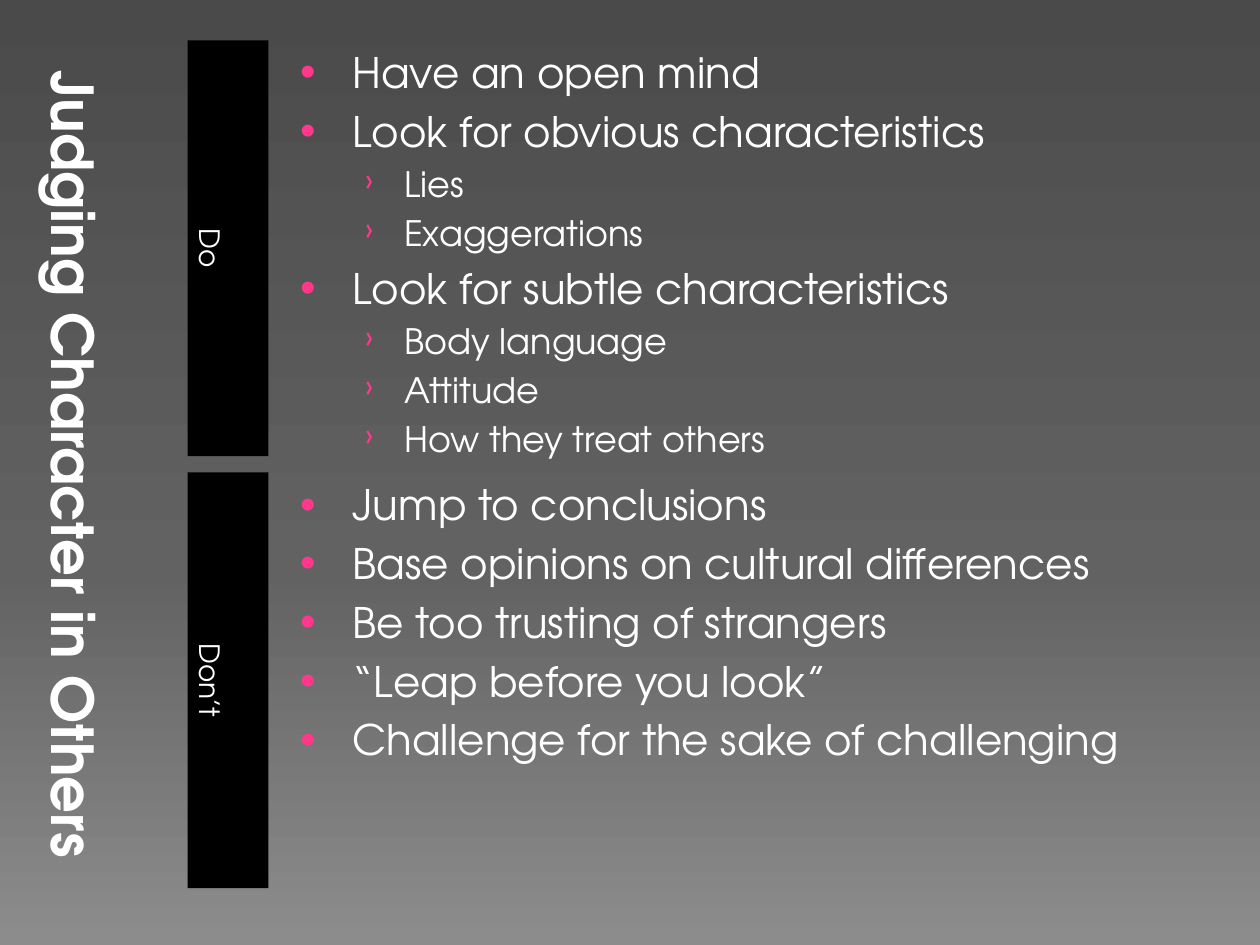
from copy import deepcopy
from dataclasses import dataclass

from lxml import etree
from pptx import Presentation
from pptx.dml.color import RGBColor
from pptx.enum.shapes import MSO_SHAPE
from pptx.enum.text import MSO_ANCHOR, PP_ALIGN
from pptx.oxml.ns import qn
from pptx.util import Inches, Pt

RECT = MSO_SHAPE.RECTANGLE
BOTTOM, TOP = MSO_ANCHOR.BOTTOM, MSO_ANCHOR.TOP
CENTER, LEFT = PP_ALIGN.CENTER, PP_ALIGN.LEFT

FONT = "TeX Gyre Adventor"
WHITE = RGBColor(0xFF, 0xFF, 0xFF)
BLACK = RGBColor(0x00, 0x00, 0x00)
PINK = RGBColor(0xFF, 0x38, 0x8C)
GRADIENT = [
    (0, RGBColor(0x4A, 0x4A, 0x4A)),
    (0.6, RGBColor(0x62, 0x62, 0x62)),
    (1, RGBColor(0x8C, 0x8C, 0x8C)),
]
SECTION_TOP, SECTION_HEIGHT, SECTION_PITCH = 0.32, 3.3, 3.43


@dataclass(frozen=True)
class Level:
    size: int
    margin: float
    indent: float
    bullet: str
    bullet_percent: int


@dataclass(frozen=True)
class Section:
    label: str
    items: list[tuple[int, str]]


LEVELS = [Level(24, 0.49, -0.42, "•", 80), Level(20, 0.9, -0.31, "›", 95)]

SECTIONS = [
    Section("Do", [
        (0, "Have an open mind"),
        (0, "Look for obvious characteristics"),
        (1, "Lies"),
        (1, "Exaggerations"),
        (0, "Look for subtle characteristics"),
        (1, "Body language"),
        (1, "Attitude"),
        (1, "How they treat others"),
    ]),
    Section("Don’t", [
        (0, "Jump to conclusions"),
        (0, "Base opinions on cultural differences"),
        (0, "Be too trusting of strangers"),
        (0, "“Leap before you look”"),
        (0, "Challenge for the sake of challenging"),
    ]),
]


def paint_background(s) -> None:
    fill = s.background.fill
    fill.gradient()
    fill.gradient_angle = 270
    stops = s.element.find(".//" + qn("a:gsLst"))
    stops.append(deepcopy(stops[-1]))
    for stop, (position, color) in zip(fill.gradient_stops, GRADIENT):
        stop.position = position
        stop.color.rgb = color


def style_paragraph(p, size: int, align=LEFT, bold: bool = False) -> None:
    p.alignment = align
    p.font.name, p.font.size, p.font.bold = FONT, Pt(size), bold
    p.font.color.rgb = WHITE


def set_vertical_text(sp, text: str, size: int, bold: bool = False) -> None:
    """Write one centred line that reads from top to bottom."""
    tf = sp.text_frame
    tf.word_wrap = True
    tf.vertical_anchor = BOTTOM
    tf.margin_left = tf.margin_right = Inches(0.05)
    tf.margin_top = tf.margin_bottom = Inches(0.05)
    tf._txBody.bodyPr.set("vert", "vert")
    p = tf.paragraphs[0]
    p.text = text
    style_paragraph(p, size, CENTER, bold)


def add_bullet(p, level: Level) -> None:
    pPr = p._p.get_or_add_pPr()
    pPr.set("marL", str(Inches(level.margin)))
    pPr.set("indent", str(Inches(level.indent)))
    marks = [
        etree.Element(qn("a:buClr")),
        etree.Element(qn("a:buSzPct"), val=str(level.bullet_percent * 1000)),
        etree.Element(qn("a:buFont"), typeface=FONT),
        etree.Element(qn("a:buChar"), char=level.bullet),
    ]
    etree.SubElement(marks[0], qn("a:srgbClr"), val=str(PINK))
    for mark in marks:
        pPr.find(qn("a:defRPr")).addprevious(mark)


def add_label(s, text: str, top: float) -> None:
    sp = s.shapes.add_shape(RECT, Inches(1.49), Inches(top),
                            Inches(0.64), Inches(SECTION_HEIGHT))
    sp.shadow.inherit = False
    sp.fill.solid()
    sp.fill.fore_color.rgb = BLACK
    sp.line.fill.background()
    set_vertical_text(sp, text, 16)


def add_list(s, items: list[tuple[int, str]], top: float) -> None:
    sp = s.shapes.add_textbox(Inches(2.21), Inches(top),
                              Inches(7.5), Inches(SECTION_HEIGHT))
    tf = sp.text_frame
    tf.word_wrap = True
    tf.vertical_anchor = TOP
    for i, (depth, text) in enumerate(items):
        level = LEVELS[depth]
        p = tf.add_paragraph() if i else tf.paragraphs[0]
        p.text = text
        p.level = depth
        p.space_before = Pt(level.size * 0.2)
        style_paragraph(p, level.size)
        add_bullet(p, level)


def main() -> None:
    prs = Presentation()
    prs.slide_width, prs.slide_height = Inches(10), Inches(7.5)
    s = prs.slides.add_slide(prs.slide_layouts[6])
    paint_background(s)

    title = s.shapes.add_textbox(Inches(0.27), Inches(SECTION_TOP),
                                 Inches(1.17), Inches(6.73))
    set_vertical_text(title, "Judging Character in Others", 33, bold=True)

    for i, section in enumerate(SECTIONS):
        top = SECTION_TOP + i * SECTION_PITCH
        add_label(s, section.label, top)
        add_list(s, section.items, top)

    prs.save("out.pptx")


if __name__ == "__main__":
    main()
